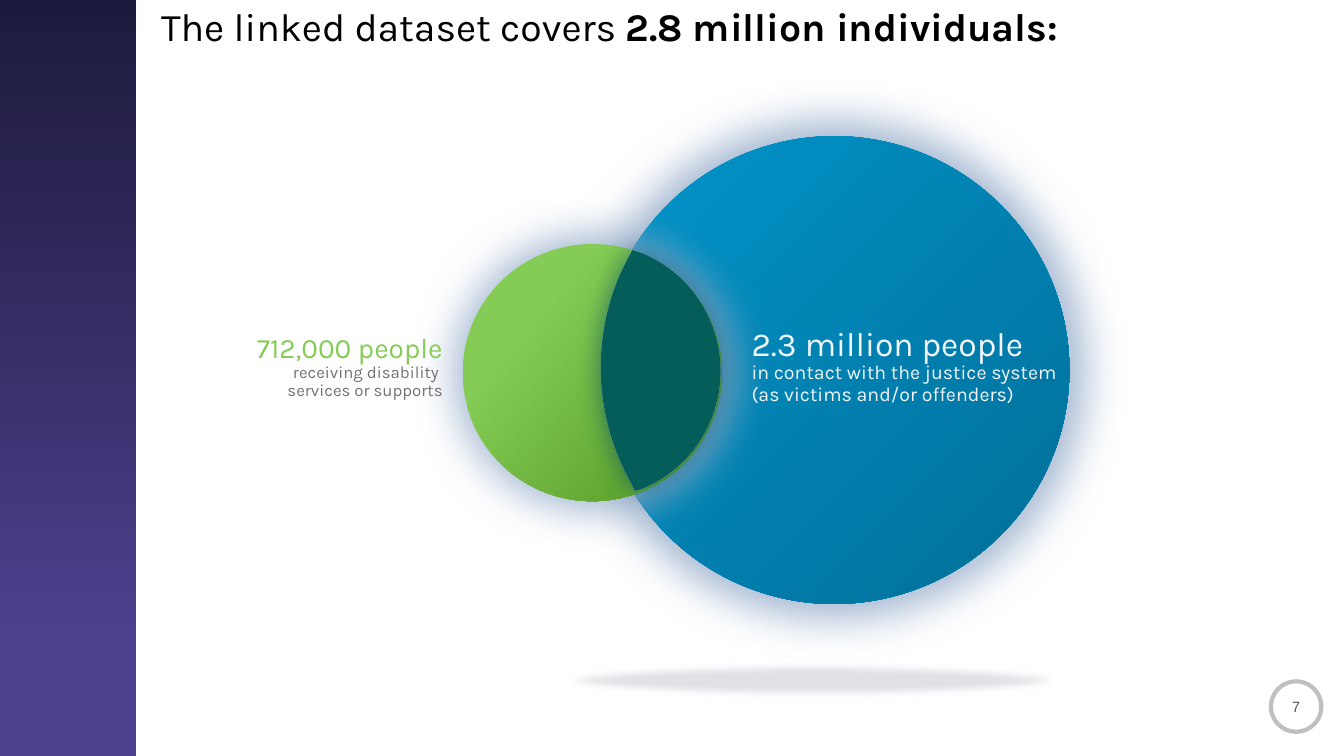
"""Builds a slide showing how two linked populations overlap."""
from copy import deepcopy
from dataclasses import dataclass

from lxml import etree
from pptx import Presentation
from pptx.dml.color import RGBColor
from pptx.enum.shapes import MSO_SHAPE
from pptx.enum.text import MSO_ANCHOR, PP_ALIGN
from pptx.oxml.ns import qn
from pptx.util import Cm, Pt

OVAL, RECTANGLE = MSO_SHAPE.OVAL, MSO_SHAPE.RECTANGLE
LEFT, CENTER, RIGHT = PP_ALIGN.LEFT, PP_ALIGN.CENTER, PP_ALIGN.RIGHT
MIDDLE = MSO_ANCHOR.MIDDLE


@dataclass(frozen=True)
class Theme:
    font: str = "Karla"
    number_font: str = "Arial"
    black: str = "000000"
    white: str = "FFFFFF"
    number: str = "595959"
    ring: str = "BFBFBF"
    floor: str = "E1E2E7"
    glow: str = "9FB4CF"
    lens: str = "055D59"
    lens_shadow: str = "004A65"
    pale: str = "F1F4F8"
    green: str = "85CC56"
    gray: str = "767171"
    sidebar: tuple = ((0, "1C1B3D"), (0.86, "4F408E"))
    justice: tuple = ((0, "0194CA"), (1, "016F98"))
    disability: tuple = ((0.27, "85CC56"), (0.77, "61A732"))
    title_size: float = 28
    justice_sizes: tuple = (24, 14)
    disability_sizes: tuple = (20, 12)
    number_size: float = 10.7


theme = Theme()


def style_shape(shape, fill, angle=0, shadow=None):
    """Fill a borderless shape, with an optional (colour, opacity, blur, scale) shadow."""
    shape.shadow.inherit = False
    shape.line.fill.background()
    if isinstance(fill, str):
        shape.fill.solid()
        shape.fill.fore_color.rgb = RGBColor.from_string(fill)
    else:
        shape.fill.gradient()
        shape.fill.gradient_angle = 360 - angle
        for stop, (position, color) in zip(shape.fill.gradient_stops, fill):
            stop.position = position
            stop.color.rgb = RGBColor.from_string(color)
    if shadow:
        color, opacity, blur, scale = shadow
        effects = shape._element.spPr.find(qn("a:effectLst"))
        outer = etree.SubElement(effects, qn("a:outerShdw"), blurRad=str(Pt(blur)),
                                 dist="0", sx=str(scale * 1000), sy=str(scale * 1000),
                                 algn="ctr", rotWithShape="0")
        tint = etree.SubElement(outer, qn("a:srgbClr"), val=color)
        etree.SubElement(tint, qn("a:alpha"), val=str(opacity * 1000))


def format_paragraph(para, size, color, align, spacing, font=theme.font):
    """Format a paragraph, its runs and its line breaks."""
    para.alignment = align
    para.line_spacing = spacing
    for span in para.runs:
        span.font.name = font
        span.font.size = Pt(size)
        span.font.color.rgb = RGBColor.from_string(color)
    for line_break in para._p.findall(qn("a:br")):
        line_break.append(deepcopy(para.runs[0]._r.rPr))


deck = Presentation()
deck.slide_width, deck.slide_height = Cm(33.87), Cm(19.05)
page = deck.slides.add_slide(deck.slide_layouts[6])
shapes = page.shapes

sidebar = shapes.add_shape(RECTANGLE, 0, 0, Cm(3.43), deck.slide_height)
style_shape(sidebar, theme.sidebar, 90)

ring = shapes.add_shape(OVAL, Cm(32.03), Cm(17.17), Cm(1.27), Cm(1.27))
style_shape(ring, theme.white)
ring.line.color.rgb = RGBColor.from_string(theme.ring)
ring.line.width = Pt(3)

number = shapes.add_textbox(Cm(32.03), Cm(17.18), Cm(1.27), Cm(1.27))
frame = number.text_frame
frame.word_wrap = True
frame.vertical_anchor = MIDDLE
frame.text = "7"
format_paragraph(frame.paragraphs[0], theme.number_size, theme.number, CENTER, 1,
                 theme.number_font)

title = shapes.add_textbox(Cm(3.81), Cm(0.08), Cm(28.35), Cm(1.7))
title.text_frame.word_wrap = True
para = title.text_frame.paragraphs[0]
for text, bold in (("The linked dataset covers ", False),
                   ("2.8 million individuals:", True)):
    span = para.add_run()
    span.text = text
    span.font.bold = bold
format_paragraph(para, theme.title_size, theme.black, LEFT, 0.9)

floor = shapes.add_shape(OVAL, Cm(13.87), Cm(16.66), Cm(13.23), Cm(0.94))
style_shape(floor, theme.floor)
floor_effects = floor._element.spPr.find(qn("a:effectLst"))
etree.SubElement(floor_effects, qn("a:softEdge"), rad=str(Pt(5)))

circles = (
    (15.09, 3.43, 11.86, 11.79, theme.justice, 45),
    (11.66, 6.15, 6.53, 6.48, theme.disability, 40),
)
for left, top, width, height, colors, angle in circles:
    circle = shapes.add_shape(OVAL, Cm(left), Cm(top), Cm(width), Cm(height))
    style_shape(circle, colors, angle, (theme.glow, 100, 32, 106))

lens_start = (15.93, 6.3)
lens_segments = (
    ((16.18, 6.38),),
    ((17.35, 6.86), (18.16, 8.01), (18.16, 9.35)),
    ((18.16, 10.69), (17.35, 11.84), (16.18, 12.32)),
    ((16, 12.37),),
    ((15.9, 12.17),),
    ((15.42, 11.3), (15.14, 10.31), (15.14, 9.27)),
    ((15.14, 8.2), (15.42, 7.21), (15.9, 6.38)),
)
lens_points = [(Cm(x), Cm(y)) for segment in lens_segments for x, y in segment]
lens_layers = (
    (theme.glow, (theme.lens_shadow, 66, 19, 100)),
    (theme.lens, None),
)
lens_group = shapes.add_group_shape()
for color, shadow in lens_layers:
    builder = lens_group.shapes.build_freeform(Cm(lens_start[0]), Cm(lens_start[1]))
    builder.add_line_segments(lens_points, close=True)
    lens = builder.convert_to_shape()
    lines = iter(list(lens._element.iter(qn("a:lnTo"))))
    for segment in lens_segments:
        first = next(lines)
        if len(segment) == 3:
            first.tag = qn("a:cubicBezTo")
            for line in (next(lines), next(lines)):
                first.append(line[0])
                line.getparent().remove(line)
    style_shape(lens, color, shadow=shadow)

labels = (
    (18.69, 8.21, 8.38, 2.16, LEFT, theme.justice_sizes, (theme.pale, theme.pale),
     ("2.3 million people",
      "in contact with the justice system \n(as victims and/or offenders)")),
    (5.26, 8.36, 6.15, 1.85, RIGHT, theme.disability_sizes, (theme.green, theme.gray),
     ("712,000 people", "receiving disability \nservices or supports")),
)
for left, top, width, height, align, sizes, colors, texts in labels:
    box = shapes.add_textbox(Cm(left), Cm(top), Cm(width), Cm(height))
    frame = box.text_frame
    frame.word_wrap = True
    paras = (frame.paragraphs[0], frame.add_paragraph())
    for para, text, size, color, spacing in zip(paras, texts, sizes, colors, (0.8, 0.9)):
        para.text = text
        format_paragraph(para, size, color, align, spacing)

deck.save("out.pptx")
